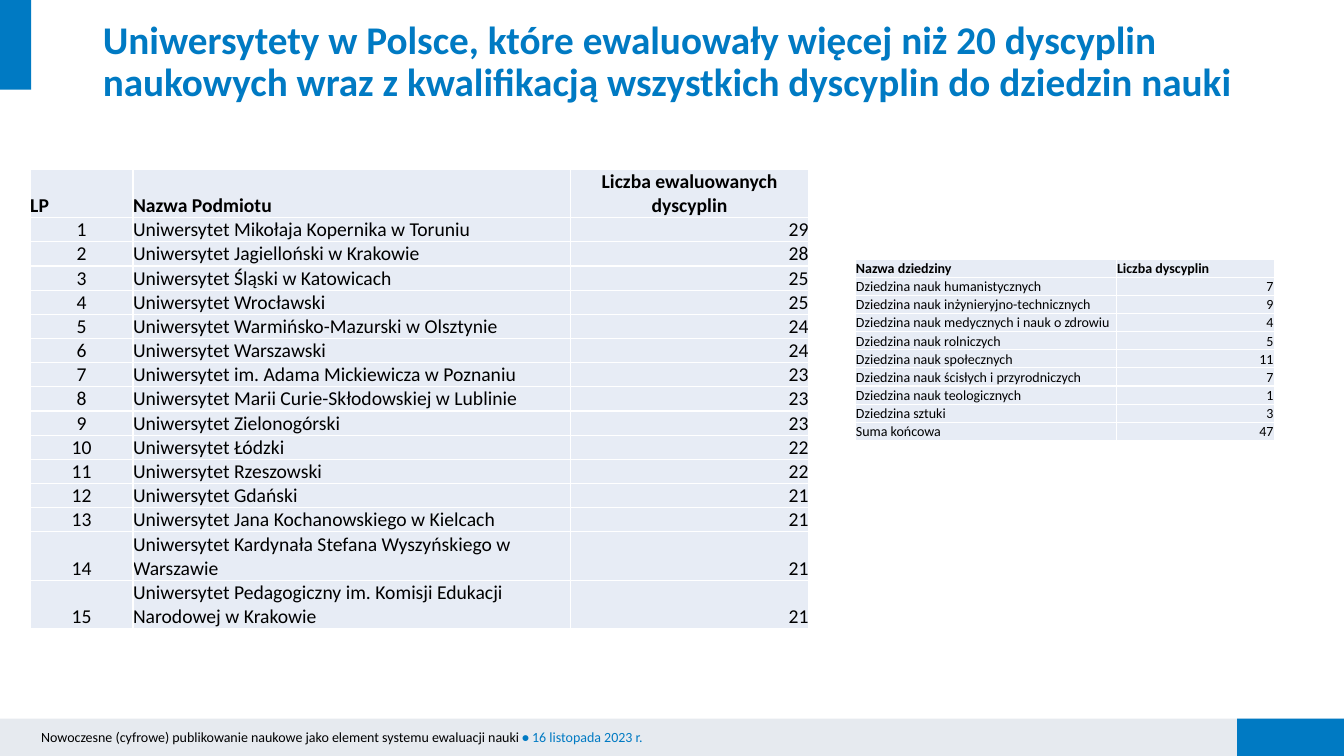
from lxml import etree
from pptx import Presentation
from pptx import util as u
from pptx.dml.color import RGBColor
from pptx.enum import shapes, text
from pptx.oxml import ns

BLUE = RGBColor(0x00, 0x7A, 0xC3)
GRAY = RGBColor(0xE6, 0xEA, 0xEF)
PALE = RGBColor(0xE7, 0xEC, 0xF5)
BLACK = RGBColor(0, 0, 0)
WHITE = RGBColor(0xFF, 0xFF, 0xFF)
FONT = "Calibri"
WIDE, HIGH = 13.33, 7.5
LEFT, MID, RIGHT = text.PP_ALIGN.LEFT, text.PP_ALIGN.CENTER, text.PP_ALIGN.RIGHT

SCHOOLS = [
    ("Uniwersytet Mikołaja Kopernika w Toruniu", 29),
    ("Uniwersytet Jagielloński w Krakowie", 28),
    ("Uniwersytet Śląski w Katowicach", 25),
    ("Uniwersytet Wrocławski", 25),
    ("Uniwersytet Warmińsko-Mazurski w Olsztynie", 24),
    ("Uniwersytet Warszawski", 24),
    ("Uniwersytet im. Adama Mickiewicza w Poznaniu", 23),
    ("Uniwersytet Marii Curie-Skłodowskiej w Lublinie", 23),
    ("Uniwersytet Zielonogórski", 23),
    ("Uniwersytet Łódzki", 22),
    ("Uniwersytet Rzeszowski", 22),
    ("Uniwersytet Gdański", 21),
    ("Uniwersytet Jana Kochanowskiego w Kielcach", 21),
    ("Uniwersytet Kardynała Stefana Wyszyńskiego w Warszawie", 21),
    ("Uniwersytet Pedagogiczny im. Komisji Edukacji Narodowej w Krakowie", 21),
]
FIELDS = [
    ("Dziedzina nauk humanistycznych", 7),
    ("Dziedzina nauk inżynieryjno-technicznych", 9),
    ("Dziedzina nauk medycznych i nauk o zdrowiu", 4),
    ("Dziedzina nauk rolniczych", 5),
    ("Dziedzina nauk społecznych", 11),
    ("Dziedzina nauk ścisłych i przyrodniczych", 7),
    ("Dziedzina nauk teologicznych", 1),
    ("Dziedzina sztuki", 3),
    ("Suma końcowa", 47),
]


def inches(box):
    return [u.Inches(v) for v in box]


def style(font, size, color, bold=False):
    font.name, font.size, font.bold = FONT, u.Pt(size), bold
    font.color.rgb = color


def add_bar(slide, box, color):
    bar = slide.shapes.add_shape(shapes.MSO_SHAPE.RECTANGLE, *inches(box))
    bar.shadow.inherit = False
    bar.fill.solid()
    bar.fill.fore_color.rgb = color
    bar.line.fill.background()


def add_title(slide, box):
    title = slide.shapes.title
    title.left, title.top, title.width, title.height = inches(box)
    frame = title.text_frame
    frame.text = ("Uniwersytety w Polsce, które ewaluowały więcej niż 20 dyscyplin "
                  "naukowych wraz z kwalifikacją wszystkich dyscyplin do dziedzin nauki")
    frame.vertical_anchor = text.MSO_ANCHOR.MIDDLE
    para = frame.paragraphs[0]
    para.alignment, para.line_spacing = LEFT, 0.9
    style(para.font, 28, BLUE, True)


def add_footer(slide, box):
    left, top, width, height = box
    add_bar(slide, box, GRAY)
    add_bar(slide, (left + width - 1.06, top, 1.06, height), BLUE)
    note = slide.shapes.add_textbox(*inches((left + 0.31, top + 0.05, 9.33, 0.27)))
    frame = note.text_frame
    frame.word_wrap = True
    parts = [
        ("Nowoczesne (cyfrowe) publikowanie naukowe jako element systemu "
         "ewaluacji nauki ", BLACK, False),
        ("• ", BLUE, True),
        ("16 listopada 2023 r.", BLUE, False),
    ]
    for words, color, bold in parts:
        run = frame.paragraphs[0].add_run()
        run.text = words
        style(run.font, 10, color, bold)


def add_border(cell):
    props = cell._tc.get_or_add_tcPr()
    for spot, side in enumerate(("lnL", "lnR", "lnT", "lnB")):
        line = etree.Element(ns.qn("a:" + side), w=str(u.Pt(1)))
        fill = etree.SubElement(line, ns.qn("a:solidFill"))
        etree.SubElement(fill, ns.qn("a:srgbClr"), val=str(WHITE))
        props.insert(spot, line)


def add_table(slide, box, rows, widths, heights, aligns, heads, size, pad):
    """Fill a table; aligns serve the body columns, heads the top row."""
    frame = slide.shapes.add_table(len(rows), len(widths), *inches(box))
    table = frame.table
    for col, width in zip(table.columns, widths):
        col.width = u.Inches(width)
    for row, height in zip(table.rows, heights):
        row.height = u.Inches(height)
    for r, row in enumerate(rows):
        for c, value in enumerate(row):
            cell = table.cell(r, c)
            cell.text = str(value)
            cell.vertical_anchor = text.MSO_ANCHOR.BOTTOM
            cell.margin_left = cell.margin_right = cell.margin_top = u.Inches(pad)
            cell.margin_bottom = 0
            cell.fill.solid()
            cell.fill.fore_color.rgb = PALE
            add_border(cell)
            para = cell.text_frame.paragraphs[0]
            para.alignment = (aligns if r else heads)[c]
            style(para.font, size, BLACK, r == 0)


def add_schools(slide, box):
    rows = [("LP", "Nazwa Podmiotu", "Liczba ewaluowanych dyscyplin")]
    rows += [(n, *school) for n, school in enumerate(SCHOOLS, 1)]
    heights = [0.48] + [0.24] * 13 + [0.48] * 2
    add_table(slide, box, rows, (1.02, 4.34, 2.36), heights,
              (MID, LEFT, RIGHT), (LEFT, LEFT, MID), 14, 0)


def add_fields(slide, box):
    rows = [("Nazwa dziedziny", "Liczba dyscyplin")] + FIELDS
    heights = [box[3] / len(rows)] * len(rows)
    add_table(slide, box, rows, (2.59, 1.57), heights,
              (LEFT, RIGHT), (LEFT, LEFT), 10, 0.01)


def main():
    deck = Presentation()
    deck.slide_width, deck.slide_height = inches((WIDE, HIGH))
    slide = deck.slides.add_slide(deck.slide_layouts[5])
    # Frame of the page
    add_footer(slide, (0, 7.13, WIDE, 0.37))
    add_bar(slide, (0, 0, 0.31, 0.89), BLUE)
    # Heading and both tables
    add_title(slide, (0.92, 0.15, 12.41, 0.95))
    add_schools(slide, (0.3, 1.68, 7.72, 4.56))
    add_fields(slide, (8.48, 2.57, 4.16, 1.8))
    deck.save("out.pptx")


if __name__ == "__main__":
    main()
